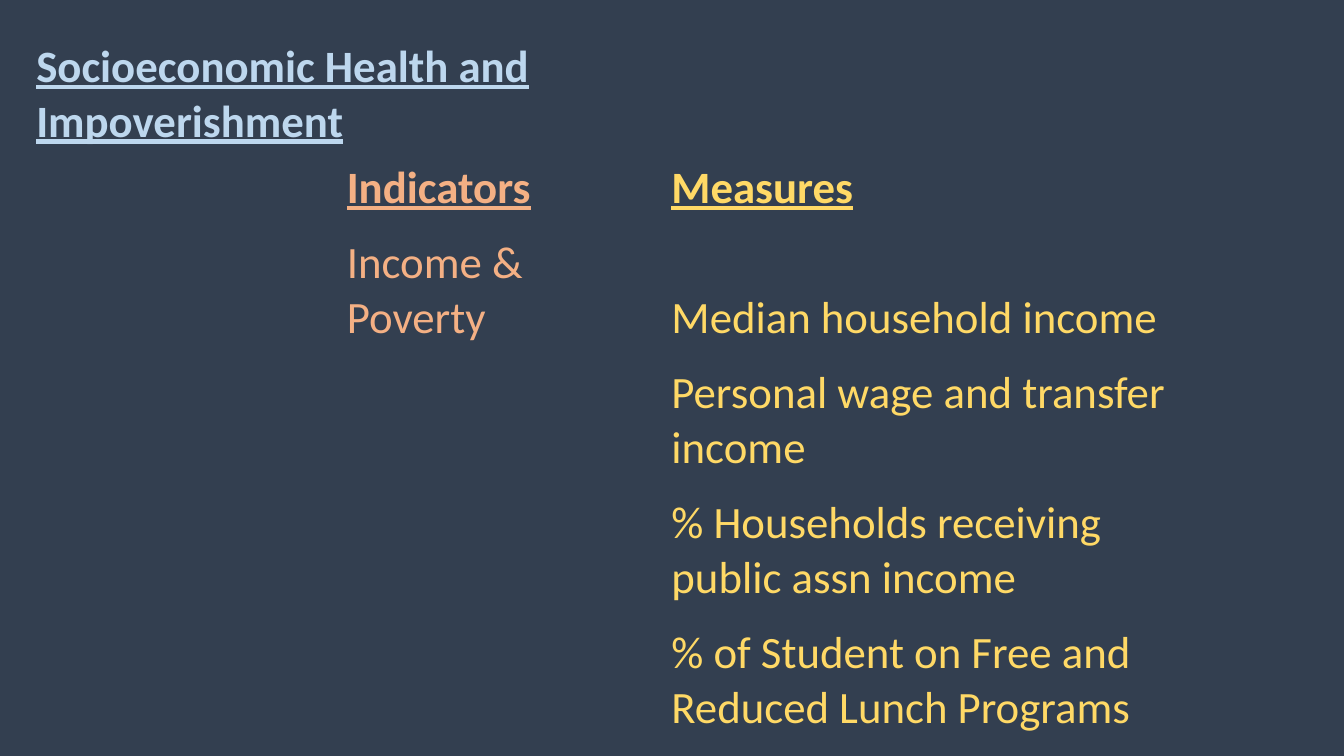
from pptx import Presentation
from pptx.dml.color import RGBColor
from pptx.enum.text import MSO_ANCHOR
from pptx.oxml.ns import qn
from pptx.util import Inches, Pt

BOTTOM = MSO_ANCHOR.BOTTOM
BACKGROUND = "333F50"
TOPIC_BLUE = "BDD7EE"
INDICATOR_ORANGE = "F4B084"
MEASURE_YELLOW = "FFD966"
NO_STYLE_NO_GRID = "{2D5ABB26-0587-4C30-8999-92F81FD0307C}"

COLUMN_WIDTHS = [3.08, 2.87, 0.35, 5.12]
ROW_HEIGHTS = [1.29, 0.66, 1.29, 1.29, 1.29, 1.29]
INDICATOR_COLUMN, MEASURE_COLUMN = 1, 3
HEADING_ROW = 1

indicators = ["Indicators", "Income & Poverty"]
measures = [
    "Measures",
    "Median household income",
    "Personal wage and transfer income",
    "% Households receiving public assn income",
    "% of Student on Free and Reduced Lunch Programs",
]


def rgb(hex_color):
    return RGBColor.from_string(hex_color)


def write_cell(cell, text, color, heading=False, size=32):
    """Fill a bottom-anchored cell; headings are bold and underlined."""
    cell.vertical_anchor = BOTTOM
    cell.margin_left = cell.margin_right = cell.margin_top = Inches(0.01)
    cell.margin_bottom = 0
    run = cell.text_frame.paragraphs[0].add_run()
    run.text = text
    run.font.name = "Calibri"
    run.font.size = Pt(size)
    run.font.bold = heading
    run.font.underline = heading
    run.font.color.rgb = rgb(color)


prs = Presentation()
prs.slide_width = Inches(13.33)
prs.slide_height = Inches(7.5)
slide = prs.slides.add_slide(prs.slide_layouts[6])
slide.background.fill.solid()
slide.background.fill.fore_color.rgb = rgb(BACKGROUND)

table_frame = slide.shapes.add_table(
    len(ROW_HEIGHTS), len(COLUMN_WIDTHS), Inches(0.35), Inches(0.19),
    Inches(sum(COLUMN_WIDTHS)), Inches(sum(ROW_HEIGHTS)))
indicator_table = table_frame.table
indicator_table.first_row = False
indicator_table.horz_banding = False
for style_id in table_frame.element.iter(qn("a:tableStyleId")):
    style_id.text = NO_STYLE_NO_GRID

for column, width in zip(indicator_table.columns, COLUMN_WIDTHS):
    column.width = Inches(width)
for row, height in zip(indicator_table.rows, ROW_HEIGHTS):
    row.height = Inches(height)
for cell in indicator_table.iter_cells():
    cell.fill.background()

topic = indicator_table.cell(0, 0)
topic.merge(indicator_table.cell(0, 1))
write_cell(topic, "Socioeconomic Health and Impoverishment", TOPIC_BLUE, heading=True)

for column_index, entries, color in [
    (INDICATOR_COLUMN, indicators, INDICATOR_ORANGE),
    (MEASURE_COLUMN, measures, MEASURE_YELLOW),
]:
    for row_index, entry in enumerate(entries, start=HEADING_ROW):
        write_cell(indicator_table.cell(row_index, column_index), entry, color,
                   heading=row_index == HEADING_ROW)

prs.save("out.pptx")
